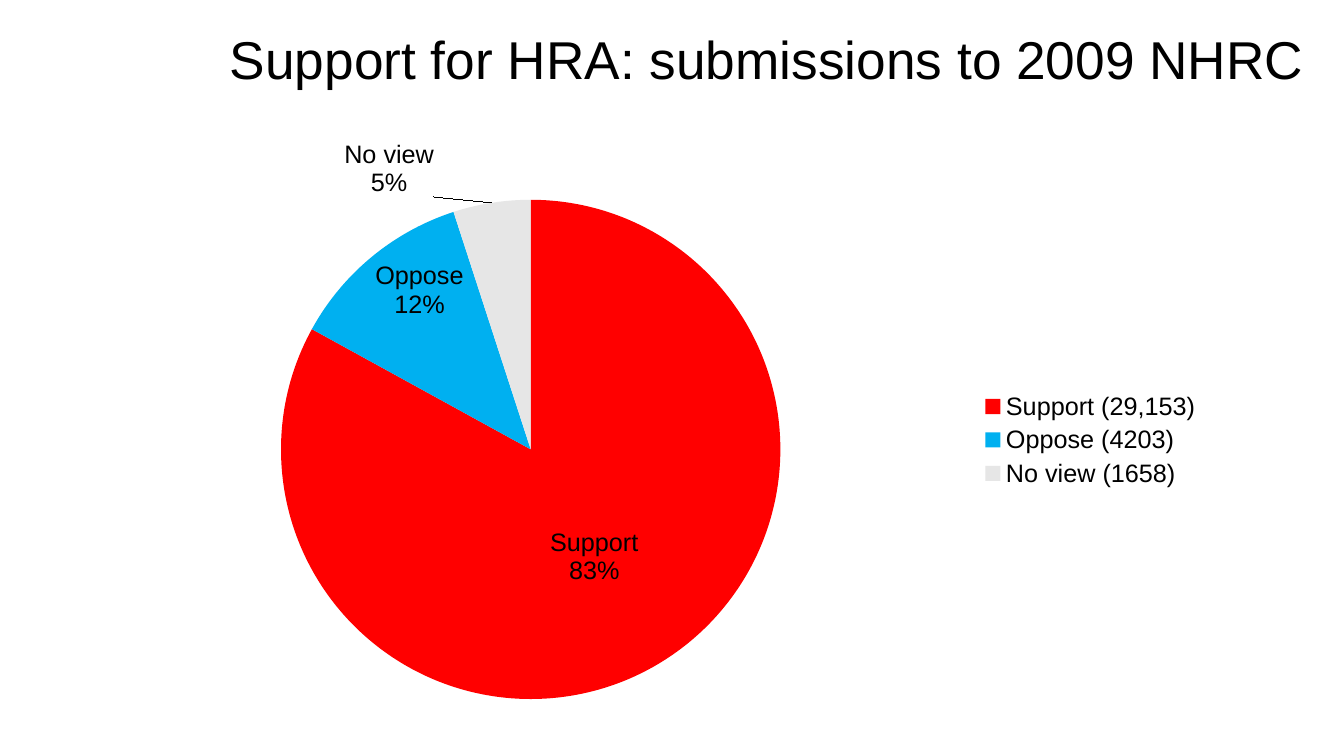
from pptx import Presentation, util as u
from pptx.chart.data import CategoryChartData
from pptx.dml.color import RGBColor
from pptx.enum import chart as ch, text
from pptx.oxml import parse_xml
from pptx.oxml.ns import nsdecls

theme = {
    "font": "Arial",
    "ink": RGBColor.from_string("000000"),
    "title": u.Pt(38),
    "body": u.Pt(18),
}
place = ch.XL_LABEL_POSITION
# Legend name, value, colour, label, label place
parts = [
    ("Support (29,153)", 83, "FF0000", "Support", place.CENTER),
    ("Oppose (4203)", 12, "00B0F0", "Oppose", place.INSIDE_END),
    ("No view (1658)", 5, "E6E6E6", "No view", place.OUTSIDE_END),
]


def style(font, size):
    font.name = theme["font"]
    font.size = theme[size]
    font.color.rgb = theme["ink"]


def layout(**marks):
    tags = "".join(f'<c:{k} val="{v}"/>' for k, v in marks.items())
    return parse_xml(f'<c:layout {nsdecls("c")}><c:manualLayout>{tags}'
                     '</c:manualLayout></c:layout>')


deck = Presentation()
deck.slide_width, deck.slide_height = u.Inches(13.33), u.Inches(7.5)
slide = deck.slides.add_slide(deck.slide_layouts[5])

# Title
title = slide.shapes.title
title.left, title.top = u.Inches(2.18), u.Inches(0.21)
title.width, title.height = u.Inches(10.88), u.Inches(1.25)
frame = title.text_frame
frame.word_wrap = True
frame.auto_size = text.MSO_AUTO_SIZE.NONE
frame.vertical_anchor = text.MSO_ANCHOR.TOP
para = frame.paragraphs[0]
para.alignment = text.PP_ALIGN.LEFT
run = para.add_run()
run.text = "Support for HRA: submissions to 2009 NHRC"
style(run.font, "title")

# Pie chart
data = CategoryChartData()
data.categories = [part[0] for part in parts]
data.add_series("Series 1", [part[1] for part in parts])
pie = slide.shapes.add_chart(
    ch.XL_CHART_TYPE.PIE, u.Inches(0.76), u.Inches(1.23),
    u.Inches(11.26), u.Inches(6.27), data).chart
pie.has_title = False
style(pie.font, "body")
pie.has_legend = True
pie.legend.position = ch.XL_LEGEND_POSITION.RIGHT
pie.legend.include_in_layout = False
style(pie.legend.font, "body")

# Pie area as shares of the chart
area = pie._chartSpace.chart.plotArea
for old in area.xpath("c:layout"):
    area.remove(old)
area.insert(0, layout(layoutTarget="inner", xMode="edge", yMode="edge",
                      x=0.18, y=0.12, w=0.44, h=0.79))

# Slices and their labels
plot = pie.plots[0]
plot.vary_by_categories = True
plot.has_data_labels = True
plot.data_labels.show_category_name = True
plot.data_labels.show_percentage = True
plot.data_labels.show_value = False
style(plot.data_labels.font, "body")
row = plot.series[0]
for i, (name, value, tone, word, spot) in enumerate(parts):
    point = row.points[i]
    point.format.fill.solid()
    point.format.fill.fore_color.rgb = RGBColor.from_string(tone)
    label = point.data_label
    lines = label.text_frame
    for para, line in ((lines.paragraphs[0], word),
                       (lines.add_paragraph(), f"{value}%")):
        run = para.add_run()
        run.text = line
        style(run.font, "body")
    label.position = spot

# Shift the last label left of its slice
mark = row._element.xpath("c:dLbls/c:dLbl")[-1]
for old in mark.xpath("c:layout"):
    mark.remove(old)
mark.insert(1, layout(x=-0.05, y=0))

deck.save("out.pptx")
